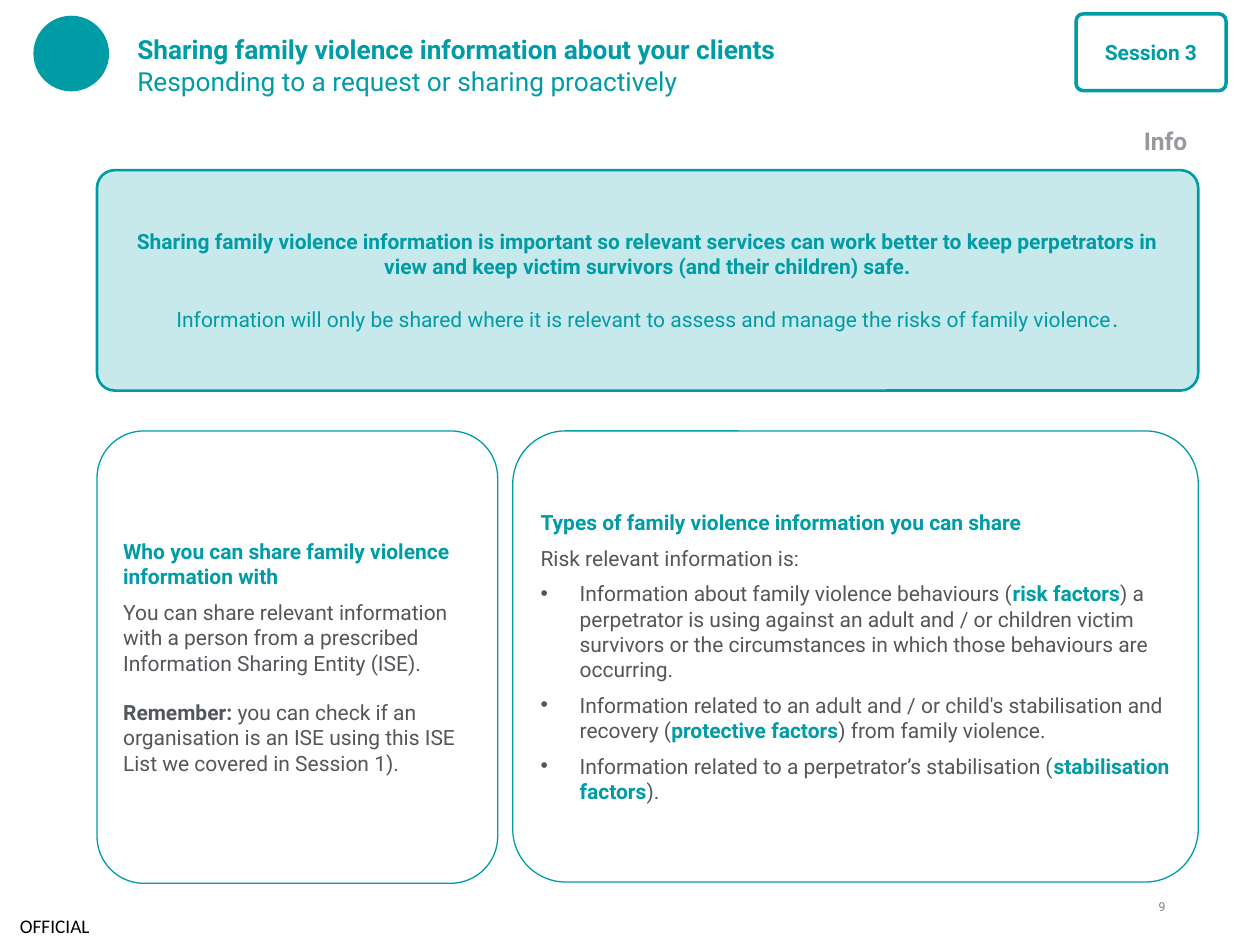
from lxml import etree
from pptx import Presentation
from pptx.dml.color import RGBColor
from pptx.enum.shapes import MSO_SHAPE as Shape
from pptx.enum.text import MSO_ANCHOR as Anchor, PP_ALIGN as Align
from pptx.oxml.ns import qn
from pptx.util import Inches, Pt

TEAL = RGBColor(0x00, 0x9C, 0xA6)
WHITE = RGBColor(0xFF, 0xFF, 0xFF)
BLACK = RGBColor(0x00, 0x00, 0x00)
INK = RGBColor(0x53, 0x56, 0x5A)
GREY = RGBColor(0x96, 0x99, 0x9E)
DIM = RGBColor(0x7F, 0x7F, 0x7F)

HEAD = {"color": TEAL, "bold": True}
PLAIN = {"color": TEAL}


def add_text(frame, text, first=False, size=12, font="Roboto", color=INK, bold=False,
             align=Align.LEFT, before=0, after=0, bullet=False):
    para = frame.paragraphs[0] if first else frame.add_paragraph()
    para.alignment = align
    para.space_before, para.space_after = Pt(before), Pt(after)
    if bullet:
        props = para._p.get_or_add_pPr()
        props.set("marL", str(Inches(0.31)))
        props.set("indent", str(-Inches(0.31)))
        etree.SubElement(props, qn("a:buFont"), typeface="Arial")
        etree.SubElement(props, qn("a:buChar"), char="•")
    parts = [(text, {})] if isinstance(text, str) else text
    for words, style in parts:
        look = {"size": size, "color": color, "bold": bold, **style}
        for index, line in enumerate(words.split("\n")):
            if index:
                para.add_line_break()
            if line:
                run = para.add_run()
                run.text = line
                run.font.name = font
                run.font.size = Pt(look["size"])
                run.font.bold = look["bold"]
                run.font.color.rgb = look["color"]


def set_frame(frame, anchor, inset):
    frame.word_wrap = True
    frame.vertical_anchor = anchor
    frame.margin_left = frame.margin_right = Inches(inset[0])
    frame.margin_top = frame.margin_bottom = Inches(inset[1])
    return frame


def add_box(slide, box, anchor=Anchor.TOP, inset=(0, 0)):
    shape = slide.shapes.add_textbox(*map(Inches, box))
    return set_frame(shape.text_frame, anchor, inset)


def add_panel(slide, box, kind=Shape.ROUNDED_RECTANGLE, round=None, fill=None,
              alpha=None, width=0.75, inset=(0.1, 0.05)):
    shape = slide.shapes.add_shape(kind, *map(Inches, box))
    shape.shadow.inherit = False
    if round is not None:
        shape.adjustments[0] = round
    if fill is None:
        shape.fill.background()
    else:
        shape.fill.solid()
        shape.fill.fore_color.rgb = fill
    if alpha is not None:
        tint = shape.fill._xPr.find(qn("a:solidFill"))[0]
        etree.SubElement(tint, qn("a:alpha"), val=str(alpha * 1000))
    shape.line.color.rgb = TEAL
    shape.line.width = Pt(width)
    return set_frame(shape.text_frame, Anchor.MIDDLE, inset)


def add_header(slide, left, top):
    add_panel(slide, (left, top, 0.59, 0.59), kind=Shape.OVAL, fill=TEAL)
    title = add_box(slide, (left + 0.82, top + 0.06, 6.86, 0.65), Anchor.MIDDLE)
    add_text(title, [("Sharing family violence information about your clients\n", HEAD),
                     ("Responding to a request or sharing proactively", PLAIN)],
             first=True, size=15, after=3.4)
    badge = add_panel(slide, (left + 8.27, top - 0.02, 1.19, 0.61), round=0.094,
                      fill=WHITE, width=2, inset=(0.2, 0.05))
    add_text(badge, "Session 3", first=True, align=Align.CENTER, after=6, **HEAD)
    info = add_box(slide, (left + 8.71, top + 0.82, 1, 0.34), inset=(0.1, 0.05))
    add_text(info, "Info", first=True, size=14, color=GREY, bold=True)


def add_banner(slide, box):
    frame = add_panel(slide, box, round=0.081, fill=TEAL, alpha=22, width=1.5)
    add_text(frame, "Sharing family violence information is important so relevant services can work "
             "better to keep perpetrators in view and keep victim survivors (and their children) safe.",
             first=True, align=Align.CENTER, **HEAD)
    add_text(frame, [("Information will only be shared where it is relevant to assess and manage "
                      "the risks of family violence", {}), (".", {"size": 14})],
             align=Align.CENTER, before=14, **PLAIN)


def add_who(slide, box):
    frame = add_panel(slide, box, round=0.117)
    add_text(frame, "Who you can share family violence information with",
             first=True, after=6, **HEAD)
    add_text(frame, "You can share relevant information with a person from a prescribed "
             "Information Sharing Entity (ISE).")
    add_text(frame, [("Remember:", {"bold": True}),
                     (" you can check if an organisation is an ISE using this ISE List "
                      "we covered in Session 1).", {})], before=14)


def add_types(slide, box):
    frame = add_panel(slide, box, round=0.117)
    add_text(frame, "Types of family violence information you can share",
             first=True, after=6, **HEAD)
    add_text(frame, "Risk relevant information is:", after=6)
    kinds = [
        ("Information about family violence behaviours (", "risk factors",
         ") a perpetrator is using against an adult and / or children victim survivors "
         "or the circumstances in which those behaviours are occurring."),
        ("Information related to an adult and / or child's stabilisation and recovery (",
         "protective factors", ") from family violence."),
        ("Information related to a perpetrator’s stabilisation (",
         "stabilisation factors", ")."),
    ]
    for start, term, rest in kinds:
        add_text(frame, [(start, {}), (term, HEAD), (rest, {})], after=6, bullet=True)


def add_footer(slide, left, top):
    mark = add_box(slide, (left, top + 0.05, 0.87, 0.31), Anchor.MIDDLE)
    add_text(mark, "OFFICIAL", first=True, size=11, font="Calibri", color=BLACK,
             align=Align.CENTER)
    page = add_box(slide, (left + 8.91, top, 0.34, 0.2))
    add_text(page, "9", first=True, size=7, color=DIM, align=Align.RIGHT)


def main():
    deck = Presentation()
    deck.slide_width, deck.slide_height = Inches(10), Inches(7.5)
    slide = deck.slides.add_slide(deck.slide_layouts[6])
    add_header(slide, 0.27, 0.13)
    add_banner(slide, (0.77, 1.35, 8.74, 1.75))
    add_who(slide, (0.77, 3.42, 3.18, 3.59))
    add_types(slide, (4.07, 3.42, 5.44, 3.58))
    add_footer(slide, 0, 7.14)
    deck.save("out.pptx")


if __name__ == "__main__":
    main()
